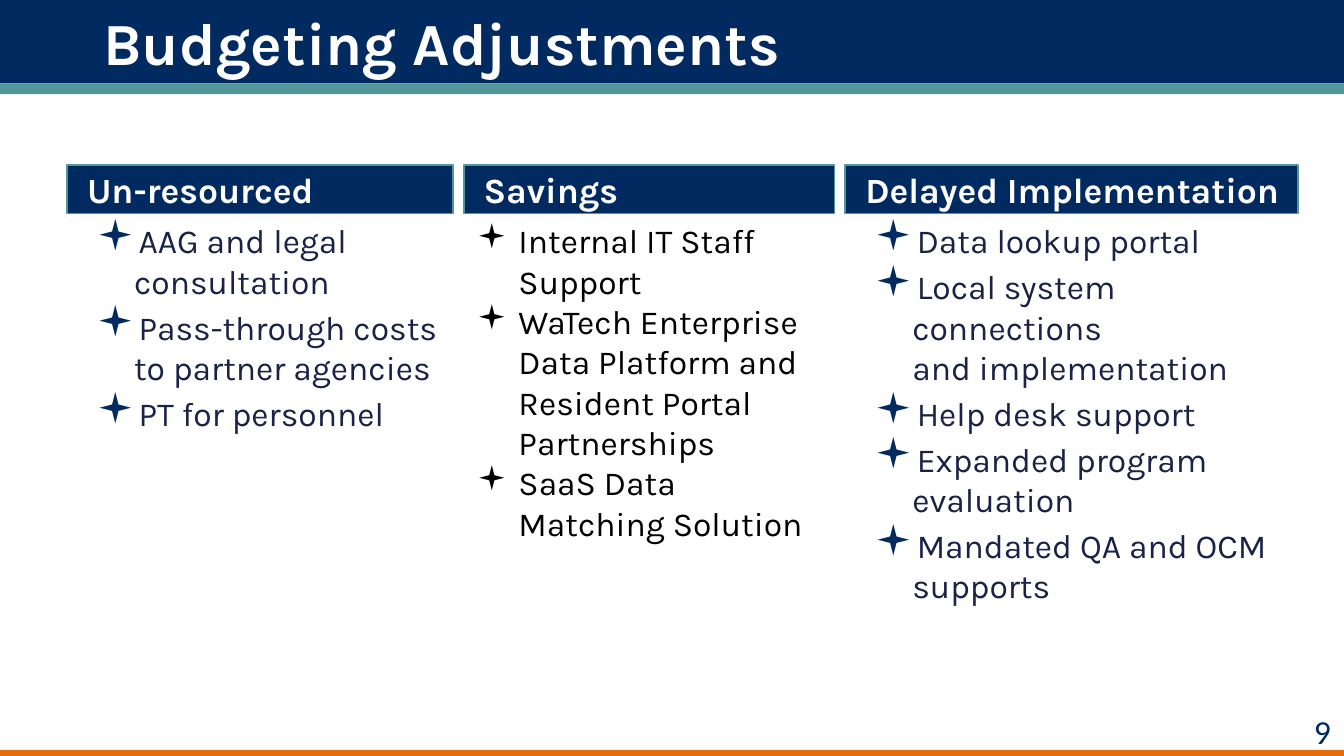
import pptx
import pptx.util
import pptx.dml.color
import pptx.enum.shapes
import pptx.enum.text
import lxml.etree

Inches = pptx.util.Inches
Pt = pptx.util.Pt
RGB = pptx.dml.color.RGBColor.from_string
ALIGN = pptx.enum.text.PP_ALIGN
ANCHOR = pptx.enum.text.MSO_ANCHOR
NBSP = chr(160)

THEME = {
    "navy": "012A60", "teal": "54979A", "orange": "E46C0A",
    "bullet": "Wingdings",
    "title": {"name": "Karla", "size": Pt(32), "bold": True, "color": "FFFFFF"},
    "heading": {"name": "Karla", "size": Pt(19), "bold": True, "color": "FFFFFF"},
    "body": {"name": "Karla", "size": Pt(18), "color": "1A2247"},
    "plain": {"name": "Karla", "size": Pt(18), "color": "000000"},
    "number": {"name": "Calibri", "size": Pt(18), "color": "012A60"},
}

BANDS = [
    (0, 0.62, "navy"),
    (0.62, 0.08, "teal"),
    (5.58, 0.05, "orange"),
]

BRANDED = {"font": "body", "left": 0.4, "hang": 0.28, "gap": 3,
           "color": THEME["navy"], "scale": 125}
SIMPLE = {"font": "plain", "left": 0.31, "hang": 0.31, "gap": 0}

COLUMNS = [
    ("Un-resourced", 0.5, 2.87, BRANDED, [
        "AAG and legal consultation",
        "Pass-through costs to partner agencies",
        "PT for personnel",
    ]),
    ("Savings", 3.45, 2.76, SIMPLE, [
        "Internal IT Staff Support",
        "WaTech Enterprise Data Platform and Resident Portal Partnerships",
        "SaaS Data Matching Solution",
    ]),
    ("Delayed Implementation", 6.29, 3.37, BRANDED, [
        "Data lookup portal",
        f"Local system connections and{NBSP}implementation",
        "Help desk support",
        "Expanded program evaluation",
        "Mandated QA and OCM supports",
    ]),
]
HEAD_TOP, HEAD_H, BODY_H = 1.23, 0.36, 3.35


def add_rect(s, x, y, w, h, fill, line=None):
    sp = s.shapes.add_shape(pptx.enum.shapes.MSO_SHAPE.RECTANGLE,
                            Inches(x), Inches(y), Inches(w), Inches(h))
    sp.shadow.inherit = False
    sp.fill.solid()
    sp.fill.fore_color.rgb = RGB(THEME[fill])
    if line:
        sp.line.color.rgb = RGB(THEME[line])
        sp.line.width = Pt(1)
    else:
        sp.line.fill.background()
    return sp


def add_box(s, x, y, w, h):
    return s.shapes.add_textbox(Inches(x), Inches(y), Inches(w), Inches(h))


def write(p, text, font, align=ALIGN.LEFT):
    p.alignment = align
    r = p.add_run()
    r.text = text
    for key, value in THEME[font].items():
        if key == "color":
            r.font.color.rgb = RGB(value)
        else:
            setattr(r.font, key, value)


def set_indent(p, left, hang=0):
    ppr = p._p.get_or_add_pPr()
    ppr.set("marL", str(Inches(left)))
    ppr.set("indent", str(-Inches(hang)))
    return ppr


def add_bullet(p, style):
    ppr = set_indent(p, style["left"], style["hang"])
    ns = pptx.oxml.ns.qn
    if "color" in style:
        clr = lxml.etree.SubElement(ppr, ns("a:buClr"))
        lxml.etree.SubElement(clr, ns("a:srgbClr"), val=style["color"])
    if "scale" in style:
        lxml.etree.SubElement(ppr, ns("a:buSzPct"), val=str(style["scale"] * 1000))
    lxml.etree.SubElement(ppr, ns("a:buFont"), typeface=THEME["bullet"])
    lxml.etree.SubElement(ppr, ns("a:buChar"), char="▪")


def frame(sp, anchor=ANCHOR.TOP):
    tf = sp.text_frame
    tf.word_wrap = True
    tf.vertical_anchor = anchor
    return tf


def add_column(s, heading, x, w, style, items):
    tf = frame(add_rect(s, x, HEAD_TOP, w, HEAD_H, "navy", "teal"), ANCHOR.MIDDLE)
    set_indent(tf.paragraphs[0], 0.05)
    write(tf.paragraphs[0], heading, "heading")

    tf = frame(add_box(s, x, HEAD_TOP + HEAD_H, w, BODY_H))
    for i, item in enumerate(items):
        p = tf.add_paragraph() if i else tf.paragraphs[0]
        add_bullet(p, style)
        if i and style["gap"]:
            p.space_before = Pt(style["gap"])
        write(p, item, style["font"])


def main():
    prs = pptx.Presentation()
    prs.slide_width = Inches(10)
    prs.slide_height = prs.slide_width * 9 // 16
    s = prs.slides.add_slide(prs.slide_layouts[6])

    for y, h, fill in BANDS:
        add_rect(s, 0, y, 10, h, fill)

    tf = frame(add_box(s, 0.67, 0, 8.95, 0.62), ANCHOR.MIDDLE)
    write(tf.paragraphs[0], "Budgeting Adjustments", "title")
    tf = frame(add_box(s, 9.42, 5.24, 0.58, 0.4))
    write(tf.paragraphs[0], "9", "number", ALIGN.RIGHT)

    for column in COLUMNS:
        add_column(s, *column)

    prs.save("out.pptx")


if __name__ == "__main__":
    main()
